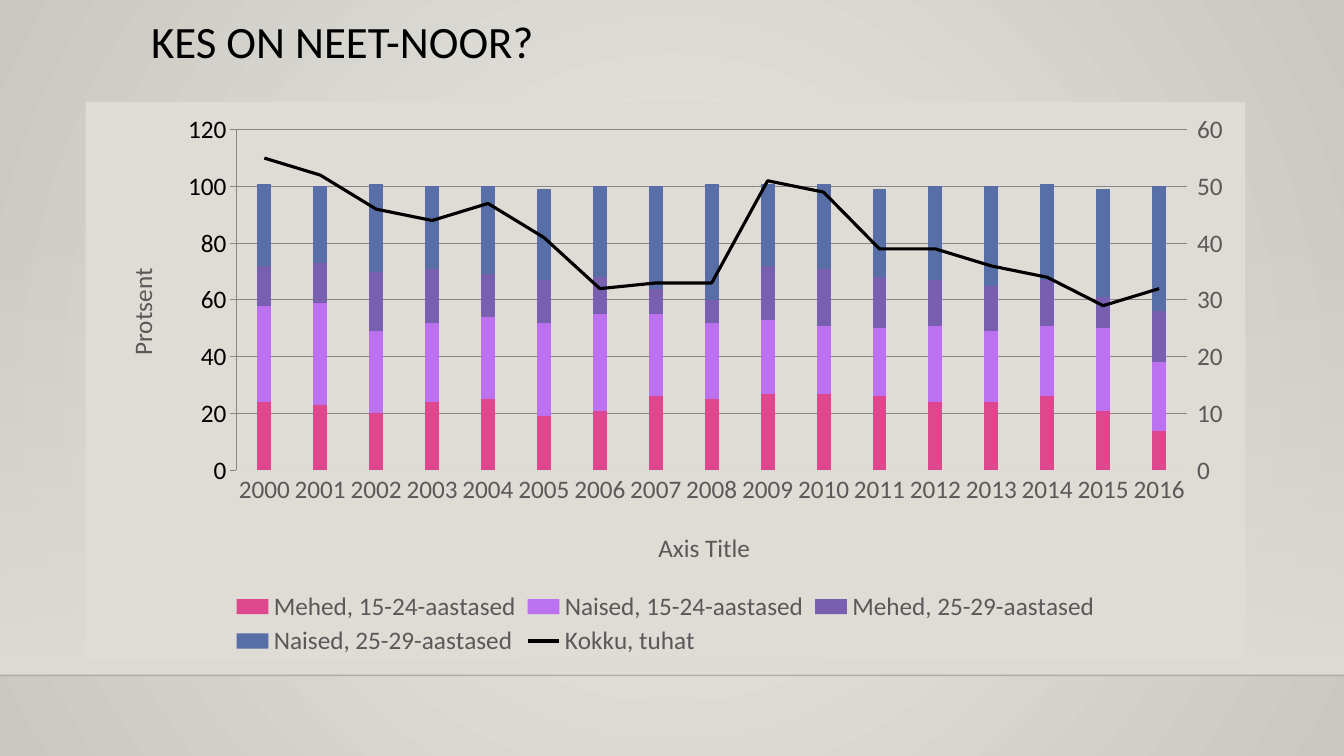
from pptx import Presentation
from pptx.chart.axis import ValueAxis
from pptx.chart.data import CategoryChartData as Data
from pptx.dml.color import RGBColor as RGB
from pptx.enum.chart import XL_CHART_TYPE as Kind, XL_LEGEND_POSITION as Spot
from pptx.enum.chart import XL_MARKER_STYLE as Mark, XL_TICK_MARK as Tick
from pptx.enum.shapes import MSO_CONNECTOR as Conn, MSO_SHAPE as Geo
from pptx.enum.text import MSO_ANCHOR as Anchor
from pptx.oxml import parse_xml
from pptx.oxml.ns import nsdecls
from pptx.util import Inches, Pt

FONT = "Calibri"
HUE = {
    "black": "000000", "edge": "000001", "text": "595959", "grid": "D9D9D9",
    "panel": "DFDBD5", "light": "ECEAE7", "dark": "CAC7C1",
}
TITLE = "KES ON NEET-NOOR?"
YEARS = [str(y) for y in range(2000, 2017)]
BARS = [
    ("Mehed, 15-24-aastased", "DE478E",
     [24, 23, 20, 24, 25, 19, 21, 26, 25, 27, 27, 26, 24, 24, 26, 21, 14]),
    ("Naised, 15-24-aastased", "BC72F0",
     [34, 36, 29, 28, 29, 33, 34, 29, 27, 26, 24, 24, 27, 25, 25, 29, 24]),
    ("Mehed, 25-29-aastased", "795FAF",
     [14, 14, 21, 19, 15, 15, 13, 9, 8, 19, 20, 18, 16, 16, 16, 11, 18]),
    ("Naised, 25-29-aastased", "586EA6",
     [29, 27, 31, 29, 31, 32, 32, 36, 41, 29, 30, 31, 33, 35, 34, 38, 44]),
]
TOTAL = ("Kokku, tuhat", HUE["black"],
         [55, 52, 46, 44, 47, 41, 32, 33, 33, 51, 49, 39, 39, 36, 34, 29, 32])


def rgb(name):
    return RGB.from_string(HUE.get(name, name))


def style(font, size, hue):
    font.name, font.size, font.bold = FONT, Pt(size), False
    font.color.rgb = rgb(hue)


def fade(stops, way):
    marks = "".join(
        f'<a:gs pos="{pos * 1000}"><a:srgbClr val="{HUE[hue]}">'
        f'<a:alpha val="{alpha * 1000}"/></a:srgbClr></a:gs>'
        for pos, hue, alpha in stops)
    return f'<a:gradFill rotWithShape="1"><a:gsLst>{marks}</a:gsLst>{way}</a:gradFill>'


def node(text):
    head, tail = text.split(">", 1)
    slash = "/" if head.endswith("/") else ""
    return parse_xml(f'{head.rstrip("/")} {nsdecls("a", "c", "p")}{slash}>{tail}')


def place(x, y, w=None, h=None, inner=False):
    size = f'<c:w val="{w}"/><c:h val="{h}"/>' if w else ""
    goal = '<c:layoutTarget val="inner"/>' if inner else ""
    return node(f'<c:layout><c:manualLayout>{goal}<c:xMode val="edge"/>'
                f'<c:yMode val="edge"/><c:x val="{x}"/><c:y val="{y}"/>{size}'
                '</c:manualLayout></c:layout>')


def put(parent, layout, after):
    for old in parent.xpath("c:layout"):
        parent.remove(old)
    if after:
        parent.xpath(after)[0].addnext(layout)
    else:
        parent.insert(0, layout)


def name_axis(axis, text, x, y):
    title = axis.axis_title
    run = title.text_frame.paragraphs[0].add_run()
    run.text = text
    style(run.font, 18, "text")
    put(title._element, place(x, y), "c:tx")


def set_scale(axis, top, step, form):
    axis.minimum_scale, axis.maximum_scale, axis.major_unit = 0, top, step
    axis.major_tick_mark = Tick.OUTSIDE
    axis.format.line.fill.background()
    axis.tick_labels.number_format = form
    axis.tick_labels.number_format_is_linked = False
    style(axis.tick_labels.font, 18, "text")


def add_backdrop(slide):
    way = ('<a:path path="circle"><a:fillToRect l="50000" t="50000" '
           'r="50000" b="50000"/></a:path>')
    fill = fade([(0, "light", 100), (100, "dark", 100)], way)
    slide.element.cSld.insert(0, node(f'<p:bg><p:bgPr>{fill}<a:effectLst/></p:bgPr></p:bg>'))
    floor = slide.shapes.add_shape(Geo.RECTANGLE, 0, Inches(2.21), Inches(13.33), Inches(4.49))
    floor.shadow.inherit = False
    floor.line.fill.background()
    fill = fade([(0, "panel", 0), (100, "panel", 100)], '<a:lin ang="5400000" scaled="0"/>')
    floor.element.spPr.xpath("a:prstGeom")[0].addnext(node(fill))
    rule = slide.shapes.add_connector(Conn.STRAIGHT, 0, Inches(6.7), Inches(13.33), Inches(6.7))
    rule.line.width = Pt(1)
    rule.line.color.rgb = rgb("edge")
    props = rule.element.spPr
    props.xpath(".//a:srgbClr")[0].append(node('<a:alpha val="20000"/>'))
    props.append(node("<a:effectLst/>"))


def add_title(slide):
    box = slide.shapes.add_textbox(Inches(1.4), Inches(0.15), Inches(10.5), Inches(1.15))
    frame = box.text_frame
    frame.word_wrap, frame.vertical_anchor = True, Anchor.TOP
    para = frame.paragraphs[0]
    para.line_spacing = 0.9
    run = para.add_run()
    run.text = TITLE
    style(run.font, 32, "black")


def split_line(chart):
    bar = chart.element.xpath(".//c:barChart")[0]
    line = node('<c:lineChart><c:grouping val="standard"/><c:varyColors val="0"/>'
                '<c:marker val="1"/><c:axId val="501"/><c:axId val="502"/></c:lineChart>')
    ser = bar.xpath("c:ser")[-1]
    for flag in ser.xpath("c:invertIfNegative"):
        ser.remove(flag)
    line.insert(2, ser)
    bar.addnext(line)
    made = []
    for tag, own, other, side, off, cross in (
            ("valAx", 502, 501, "r", 0, "max"), ("catAx", 501, 502, "b", 1, "autoZero")):
        made.append(node(
            f'<c:{tag}><c:axId val="{own}"/><c:scaling><c:orientation val="minMax"/></c:scaling>'
            f'<c:delete val="{off}"/><c:axPos val="{side}"/><c:majorTickMark val="out"/>'
            f'<c:minorTickMark val="none"/><c:tickLblPos val="nextTo"/>'
            f'<c:crossAx val="{other}"/><c:crosses val="{cross}"/></c:{tag}>'))
    last = chart.element.xpath(".//c:valAx")[-1]
    for axis in reversed(made):
        last.addnext(axis)
    return ValueAxis(made[0])


def add_chart(slide):
    data = Data()
    data.categories = YEARS
    for name, hue, vals in BARS + [TOTAL]:
        data.add_series(name, vals)
    chart = slide.shapes.add_chart(Kind.COLUMN_STACKED, Inches(0.85), Inches(1.01),
                                   Inches(11.5), Inches(5.54), data).chart
    chart.has_title = False
    style(chart.font, 18, "black")
    right = split_line(chart)
    bars, lines = chart.plots
    bars.gap_width, bars.overlap, bars.vary_by_categories = 300, 100, False
    for ser, (name, hue, vals) in zip(bars.series, BARS):
        ser.format.fill.solid()
        ser.format.fill.fore_color.rgb = rgb(hue)
    total = lines.series[0]
    total.smooth = False
    total.marker.style = Mark.NONE
    total.format.line.width = Pt(2.25)
    total.format.line.color.rgb = rgb(TOTAL[1])

    cat, left = chart.category_axis, chart.value_axis
    cat.major_tick_mark = Tick.NONE
    style(cat.tick_labels.font, 18, "text")
    left.has_major_gridlines = True
    for edge in (cat.format.line, left.major_gridlines.format.line):
        edge.width = Pt(0.75)
        edge.color.rgb = rgb("grid")
    set_scale(left, 120, 20, "0.0")
    set_scale(right, 60, 10, "General")
    name_axis(cat, "Axis Title", 0.49, 0.76)
    name_axis(left, "Protsent", 0.03, 0.29)

    chart.has_legend = True
    key = chart.legend
    key.position, key.include_in_layout = Spot.BOTTOM, False
    style(key.font, 18, "text")
    put(key._element, place(0.12, 0.87, 0.76, 0.13), "c:legendPos")
    put(chart.element.xpath(".//c:plotArea")[0], place(0.13, 0.05, 0.82, 0.61, True), None)
    panel = node(f'<c:spPr><a:solidFill><a:srgbClr val="{HUE["panel"]}"/></a:solidFill>'
                 '<a:ln><a:noFill/></a:ln></c:spPr>')
    chart.element.xpath("c:chart")[0].addnext(panel)


def main():
    deck = Presentation()
    deck.slide_width, deck.slide_height = Inches(13.33), Inches(7.5)
    slide = deck.slides.add_slide(deck.slide_layouts[6])
    add_backdrop(slide)
    add_title(slide)
    add_chart(slide)
    deck.save("out.pptx")


if __name__ == "__main__":
    main()
